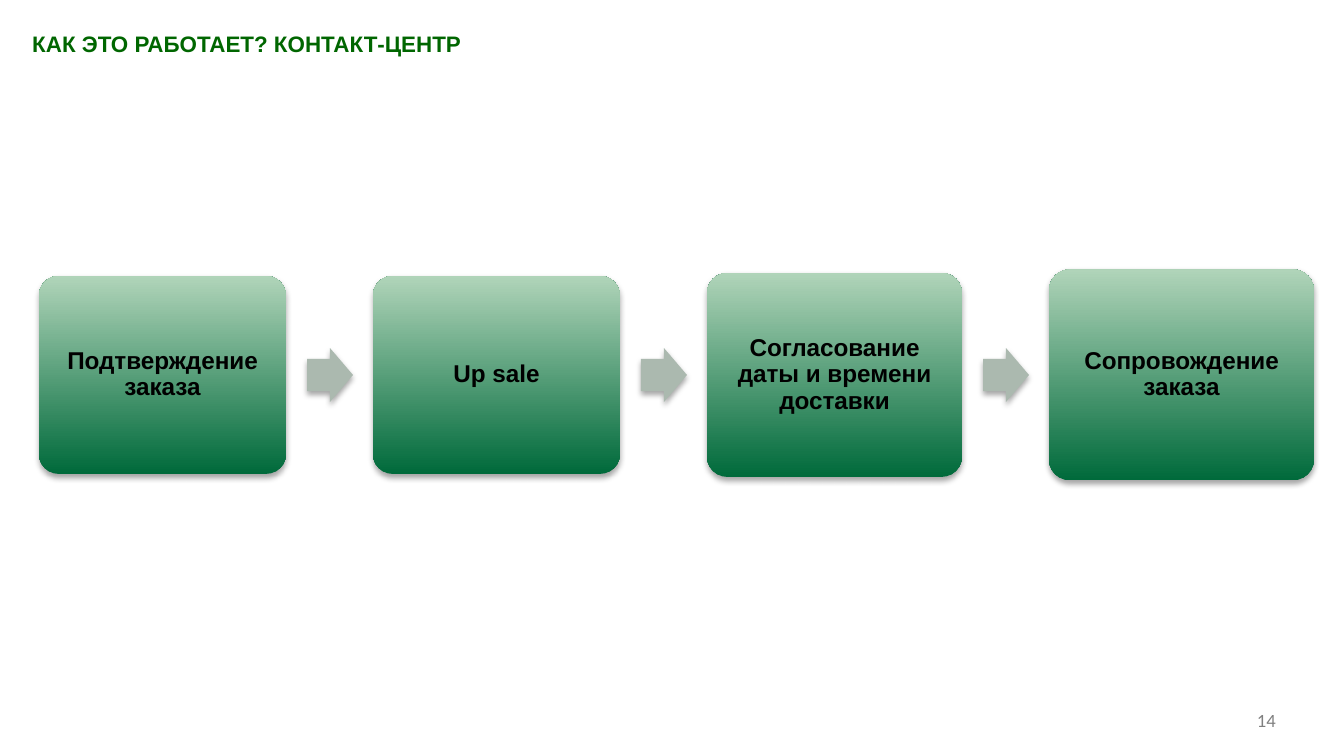
from dataclasses import dataclass

from lxml import etree
from pptx import Presentation
from pptx.dml.color import RGBColor
from pptx.enum.shapes import MSO_SHAPE
from pptx.enum.text import MSO_ANCHOR, PP_ALIGN
from pptx.oxml.ns import qn
from pptx.shapes.autoshape import Shape
from pptx.slide import Slide
from pptx.util import Emu, Pt

ROUNDED, ARROW = MSO_SHAPE.ROUNDED_RECTANGLE, MSO_SHAPE.RIGHT_ARROW
LEFT, CENTER, RIGHT = PP_ALIGN.LEFT, PP_ALIGN.CENTER, PP_ALIGN.RIGHT
TOP, MIDDLE = MSO_ANCHOR.TOP, MSO_ANCHOR.MIDDLE

EMU_PER_PX = 914400 / 134.4


@dataclass(frozen=True)
class Theme:
    title: str = "006600"
    text: str = "000000"
    number: str = "808080"
    card_bottom: str = "006A3B"
    card_top: str = "B0D4B9"
    arrow: str = "ABB9AF"
    shadow: str = "000000"
    font: str = "Arial"
    number_font: str = "Calibri"
    title_size: int = 12
    card_size: int = 13
    number_size: int = 10


@dataclass(frozen=True)
class Step:
    label: str
    width: int
    height: int


THEME = Theme()
STEPS = (
    Step("Подтверждение заказа", 247, 198),
    Step("Up sale", 247, 198),
    Step("Согласование даты и времени доставки", 255, 204),
    Step("Сопровождение заказа", 265, 211),
)
ROW_LEFT, ROW_MIDDLE = 39, 375
ARROW_WIDTH, ARROW_HEIGHT = 46, 54
GAP_BEFORE_ARROW, GAP_AFTER_ARROW = 21, 20


def px(value: float) -> Emu:
    return Emu(round(value * EMU_PER_PX))


def write_text(shape: Shape, text: str, *, size: int, color: str,
               font: str = THEME.font, bold: bool = False,
               align: PP_ALIGN = LEFT, anchor: MSO_ANCHOR = TOP,
               margin: int | None = None, line_spacing: float = 1.0) -> None:
    frame = shape.text_frame
    frame.word_wrap = True
    frame.vertical_anchor = anchor
    if margin is not None:
        frame.margin_left = frame.margin_right = px(margin)
        frame.margin_top = frame.margin_bottom = px(margin)
    paragraph = frame.paragraphs[0]
    paragraph.alignment = align
    paragraph.line_spacing = line_spacing
    run = paragraph.add_run()
    run.text = text
    run.font.name = font
    run.font.size = Pt(size)
    run.font.bold = bold
    run.font.color.rgb = RGBColor.from_string(color)


def add_shadow(shape: Shape) -> None:
    shape.shadow.inherit = False
    effects = shape.element.spPr.find(qn("a:effectLst"))
    shadow = etree.SubElement(
        effects, qn("a:outerShdw"), blurRad=str(Pt(3.1)), dist=str(Pt(1.8)),
        dir="5400000", rotWithShape="0")
    color = etree.SubElement(shadow, qn("a:srgbClr"), val=THEME.shadow)
    etree.SubElement(color, qn("a:alpha"), val="35000")


def add_centred_shape(slide: Slide, kind: MSO_SHAPE, left: int,
                      width: int, height: int) -> Shape:
    """Place a shadowed shape vertically centred on the row."""
    shape = slide.shapes.add_shape(
        kind, px(left), px(ROW_MIDDLE - height / 2), px(width), px(height))
    shape.line.fill.background()
    add_shadow(shape)
    return shape


def add_card(slide: Slide, step: Step, left: int) -> None:
    card = add_centred_shape(slide, ROUNDED, left, step.width, step.height)
    card.adjustments[0] = 0.1
    card.fill.gradient()
    card.fill.gradient_angle = 90
    for stop, color in zip(card.fill.gradient_stops,
                           (THEME.card_bottom, THEME.card_top)):
        stop.color.rgb = RGBColor.from_string(color)
    write_text(card, step.label, size=THEME.card_size, color=THEME.text,
               bold=True, align=CENTER, anchor=MIDDLE, margin=7,
               line_spacing=0.9)


def add_arrow(slide: Slide, left: int) -> None:
    arrow = add_centred_shape(slide, ARROW, left, ARROW_WIDTH, ARROW_HEIGHT)
    arrow.adjustments[0] = 0.6
    arrow.adjustments[1] = 0.5
    arrow.fill.solid()
    arrow.fill.fore_color.rgb = RGBColor.from_string(THEME.arrow)


def add_process(slide: Slide) -> None:
    left = ROW_LEFT
    for index, step in enumerate(STEPS):
        if index:
            left += GAP_BEFORE_ARROW
            add_arrow(slide, left)
            left += ARROW_WIDTH + GAP_AFTER_ARROW
        add_card(slide, step, left)
        left += step.width


def main() -> None:
    presentation = Presentation()
    presentation.slide_width, presentation.slide_height = px(1344), px(756)
    slide = presentation.slides.add_slide(presentation.slide_layouts[6])

    # Page number
    number = slide.shapes.add_textbox(px(1125), px(700), px(164), px(40))
    write_text(number, "14", size=THEME.number_size, color=THEME.number,
               font=THEME.number_font, align=RIGHT, anchor=MIDDLE)

    # Title
    title = slide.shapes.add_textbox(px(19), px(24), px(913), px(67))
    write_text(title, "КАК ЭТО РАБОТАЕТ? КОНТАКТ-ЦЕНТР",
               size=THEME.title_size, color=THEME.title, bold=True)

    # Order process
    add_process(slide)

    presentation.save("out.pptx")


if __name__ == "__main__":
    main()
